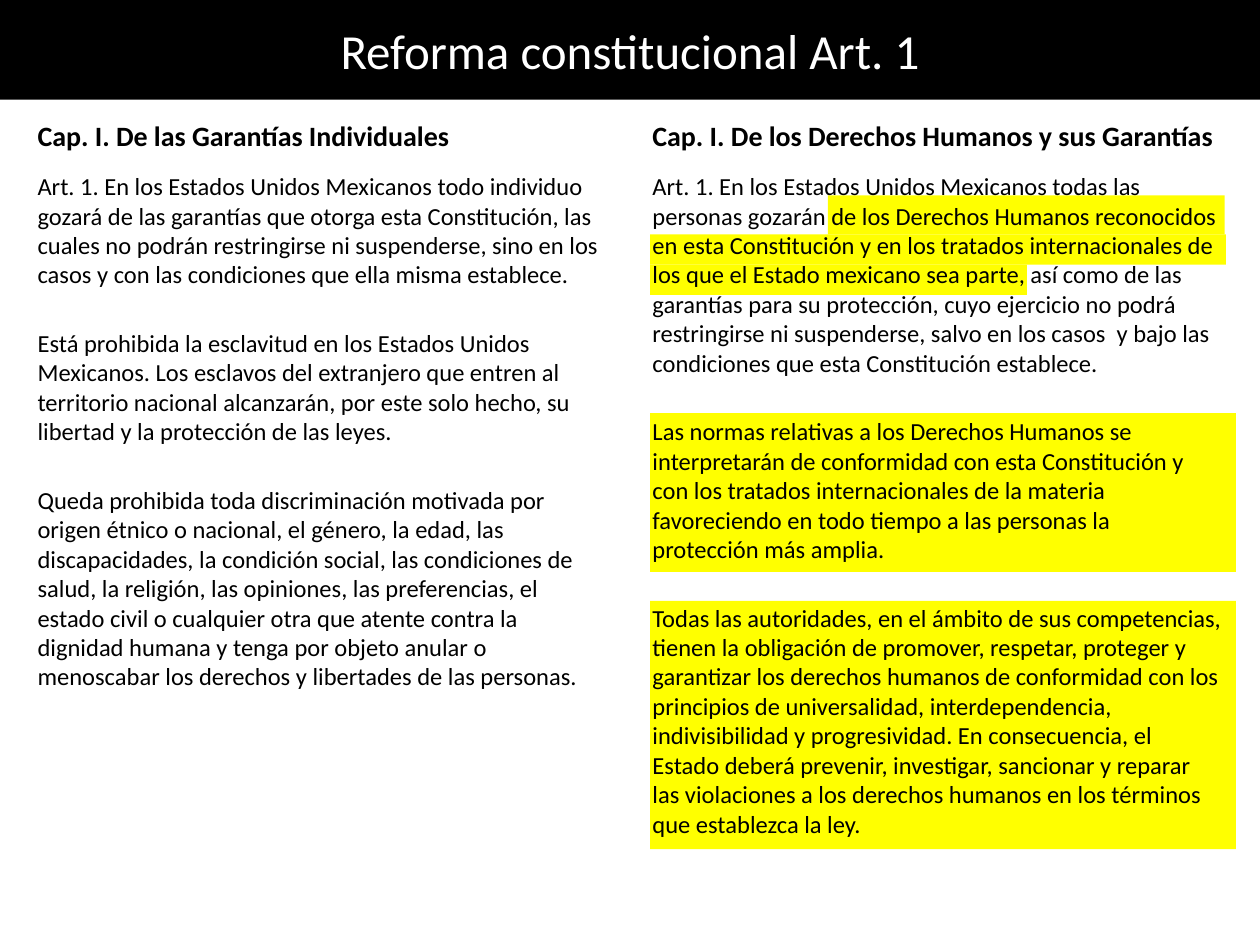
from typing import NamedTuple

from pptx import Presentation
from pptx.dml.color import RGBColor
from pptx.enum.shapes import MSO_SHAPE
from pptx.enum.text import MSO_ANCHOR, MSO_AUTO_SIZE, PP_ALIGN
from pptx.util import Inches, Pt

COLORS = {"band": "000000", "text": "000000", "title": "FFFFFF", "mark": "FFFF00"}
FORMATS = {
    "title": {"size": Pt(28), "bold": False, "name": "Calibri"},
    "heading": {"size": Pt(16), "bold": True, "name": "Calibri"},
    "article": {"size": Pt(14), "bold": False, "name": "Calibri"},
}
LINE_PITCH = Pt(16.8)
PARAGRAPH_GAP = Pt(22.4)


class Box(NamedTuple):
    left: float
    top: float
    width: float
    height: float

    def lengths(self) -> list:
        return [Inches(value) for value in self]


class Column(NamedTuple):
    left: float
    heading_width: float
    article_width: float
    article_height: float
    heading: str
    paragraphs: list[str]


MARKS = [
    Box(5.16, 4.77, 4.65, 1.97),
    Box(5.16, 3.28, 4.65, 1.26),
    Box(5.16, 2.1, 2.99, 0.24),
    Box(5.16, 1.86, 4.57, 0.24),
    Box(6.57, 1.55, 3.15, 0.31),
]

COLUMNS = [
    Column(0.2, 4.65, 4.73, 4.6, "Cap. I. De las Garantías Individuales", [
        "Art. 1. En los Estados Unidos Mexicanos todo individuo gozará de las "
        "garantías que otorga esta Constitución, las cuales no podrán restringirse "
        "ni suspenderse, sino en los casos y con las condiciones que ella misma "
        "establece.",
        "Está prohibida la esclavitud en los Estados Unidos Mexicanos. Los esclavos "
        "del extranjero que entren al territorio nacional alcanzarán, por este solo "
        "hecho, su libertad y la protección de las leyes.",
        "Queda prohibida toda discriminación motivada por origen étnico o nacional, "
        "el género, la edad, las discapacidades, la condición social, las "
        "condiciones de salud, la religión, las opiniones, las preferencias, el "
        "estado civil o cualquier otra que atente contra la dignidad humana y tenga "
        "por objeto anular o menoscabar los derechos y libertades de las personas.",
    ]),
    Column(5.08, 4.72, 4.72, 5.51, "Cap. I. De los Derechos Humanos y sus Garantías", [
        "Art. 1. En los Estados Unidos Mexicanos todas las personas gozarán de los "
        "Derechos Humanos reconocidos en esta Constitución y en los tratados "
        "internacionales de los que el Estado mexicano sea parte, así como de las "
        "garantías para su protección, cuyo ejercicio no podrá restringirse ni "
        "suspenderse, salvo en los casos  y bajo las condiciones que esta "
        "Constitución establece.",
        "Las normas relativas a los Derechos Humanos se interpretarán de conformidad "
        "con esta Constitución y con los tratados internacionales de la materia "
        "favoreciendo en todo tiempo a las personas la protección más amplia.",
        "Todas las autoridades, en el ámbito de sus competencias, tienen la "
        "obligación de promover, respetar, proteger y garantizar los derechos humanos "
        "de conformidad con los principios de universalidad, interdependencia, "
        "indivisibilidad y progresividad. En consecuencia, el Estado deberá prevenir, "
        "investigar, sancionar y reparar las violaciones a los derechos humanos en "
        "los términos que establezca la ley.",
    ]),
]


def color(key: str) -> RGBColor:
    return RGBColor.from_string(COLORS[key])


def style(font, format_key: str, color_key: str) -> None:
    for attribute, value in FORMATS[format_key].items():
        setattr(font, attribute, value)
    font.color.rgb = color(color_key)


def draw_title(slide, text: str) -> None:
    title = slide.shapes.title
    title.left, title.top, title.width, title.height = Box(0, 0, 10, 0.79).lengths()
    title.fill.solid()
    title.fill.fore_color.rgb = color("band")
    frame = title.text_frame
    frame.text = text
    frame.auto_size = MSO_AUTO_SIZE.NONE
    frame.vertical_anchor = MSO_ANCHOR.MIDDLE
    frame.paragraphs[0].alignment = PP_ALIGN.CENTER
    style(frame.paragraphs[0].runs[0].font, "title", "title")


def draw_mark(slide, box: Box) -> None:
    mark = slide.shapes.add_shape(MSO_SHAPE.RECTANGLE, *box.lengths())
    mark.shadow.inherit = False
    mark.fill.solid()
    mark.fill.fore_color.rgb = color("mark")
    mark.line.fill.background()


def draw_text(slide, box: Box, texts: list[str], format_key: str, anchor) -> list:
    frame = slide.shapes.add_textbox(*box.lengths()).text_frame
    frame.word_wrap = True
    frame.vertical_anchor = anchor
    frame.text = "\n".join(texts)
    for paragraph in frame.paragraphs:
        style(paragraph.runs[0].font, format_key, "text")
    return list(frame.paragraphs)


def draw_column(slide, column: Column) -> None:
    draw_text(slide, Box(column.left, 0.92, column.heading_width, 0.34),
              [column.heading], "heading", MSO_ANCHOR.BOTTOM)
    paragraphs = draw_text(
        slide, Box(column.left, 1.31, column.article_width, column.article_height),
        column.paragraphs, "article", MSO_ANCHOR.TOP)
    for index, paragraph in enumerate(paragraphs):
        paragraph.line_spacing = LINE_PITCH
        if index:
            paragraph.space_before = PARAGRAPH_GAP


def main() -> None:
    deck = Presentation()
    deck.slide_width, deck.slide_height = Inches(10), Inches(7.5)
    slide = deck.slides.add_slide(deck.slide_layouts[5])

    # Title band
    draw_title(slide, "Reforma constitucional Art. 1")

    # Highlights behind the reformed wording
    for box in MARKS:
        draw_mark(slide, box)

    # Former and reformed article side by side
    for column in COLUMNS:
        draw_column(slide, column)

    deck.save("out.pptx")


if __name__ == "__main__":
    main()
